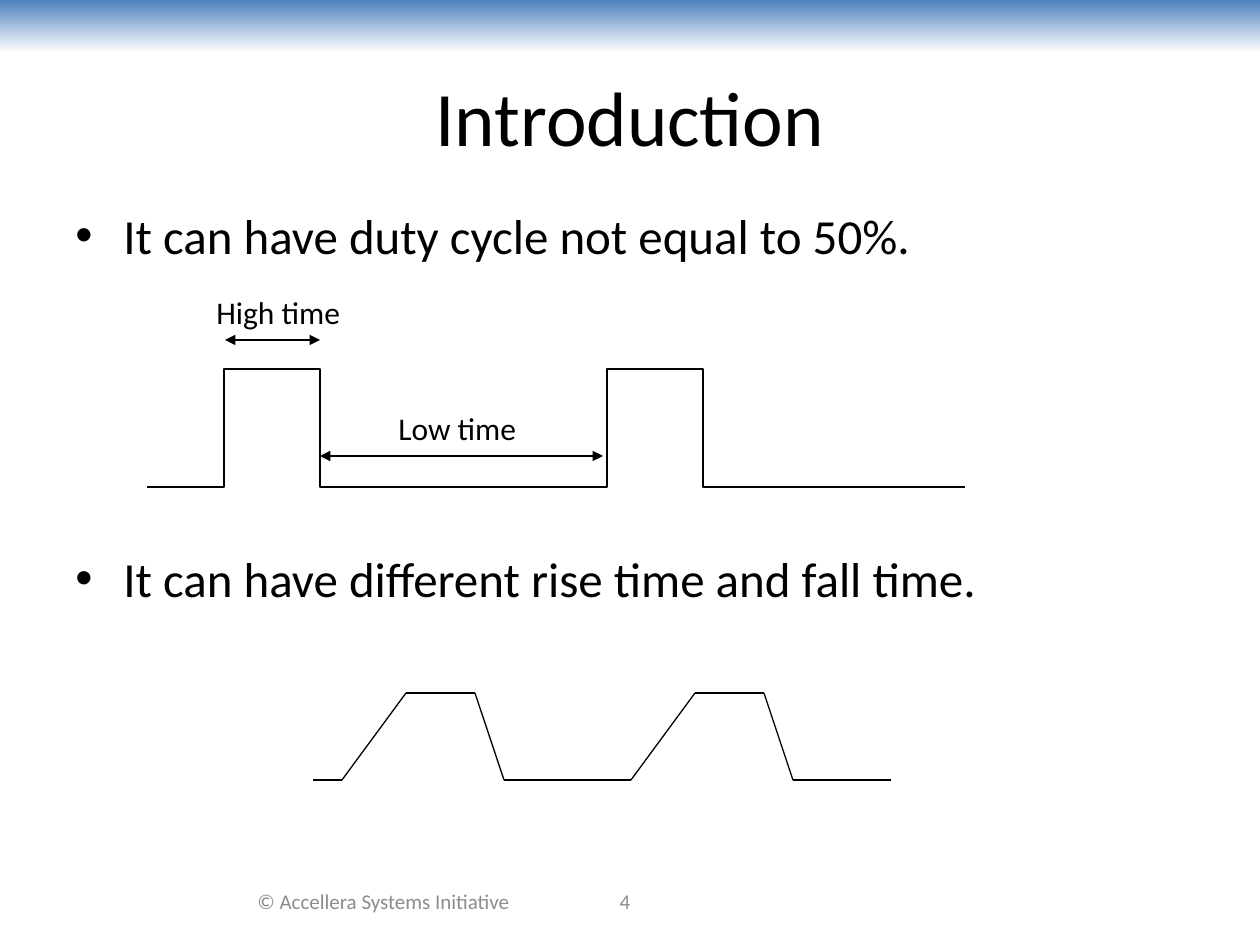
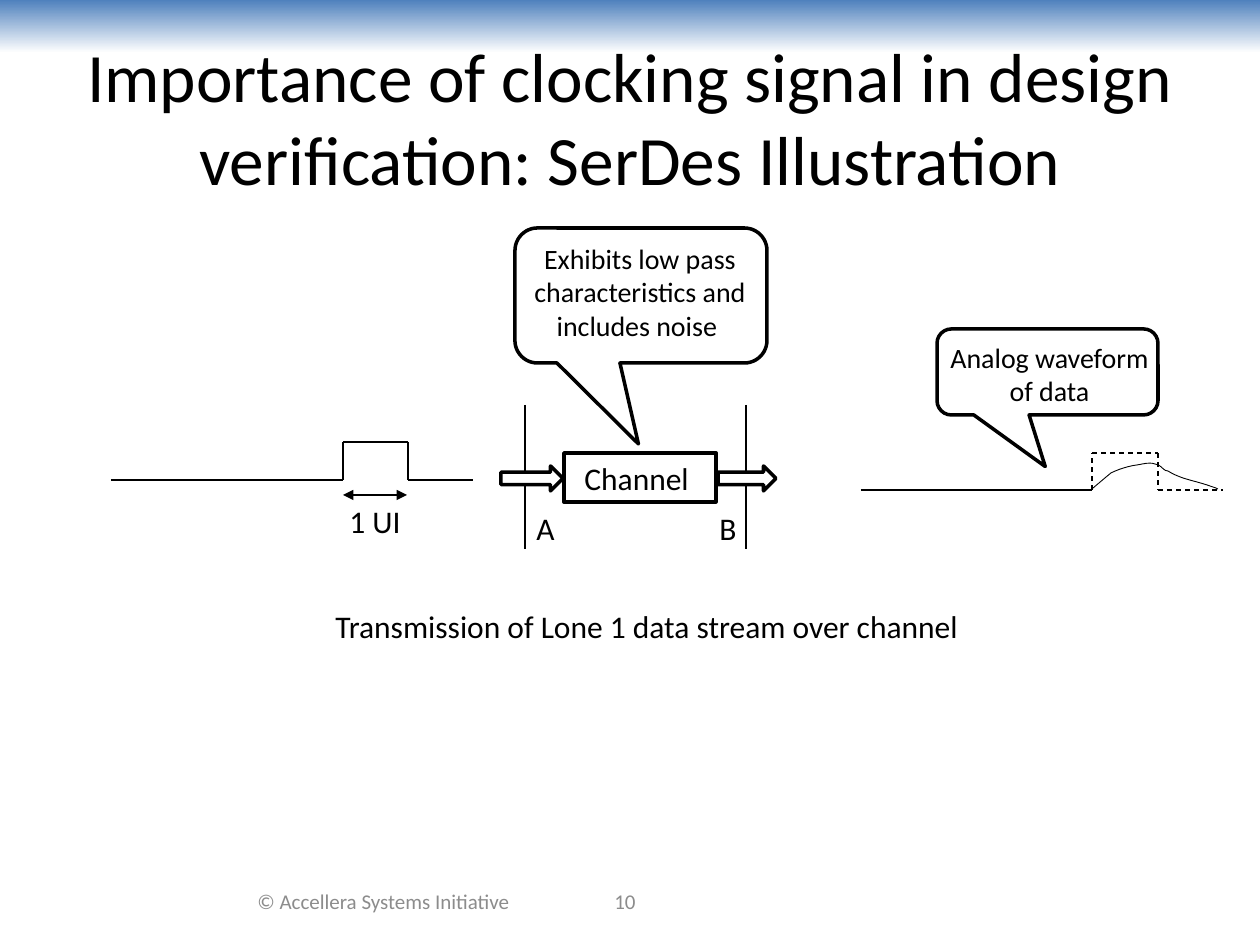
from dataclasses import dataclass
from itertools import pairwise

from lxml import etree
from pptx import Presentation
from pptx import util as u
from pptx.dml.color import RGBColor
from pptx.enum import dml, shapes, text
from pptx.oxml.ns import qn

SCALE = 914400 / 126  # EMU in one px


@dataclass(frozen=True)
class Theme:
    font: str = "Calibri"
    ink: str = "000000"
    paper: str = "FFFFFF"
    band: str = "4F81BD"
    muted: str = "8C8C8C"
    title: float = 44
    title_long: float = 39.6
    body: float = 28
    label: float = 18
    callout: float = 16
    footer: float = 12
    thin: float = 0.75
    curve: float = 0.5
    thick: float = 2


T = Theme()
ALIGN, ANCHOR, SHAPE = text.PP_ALIGN, text.MSO_ANCHOR, shapes.MSO_SHAPE
CENTRED = dict(align=ALIGN.CENTER, anchor=ANCHOR.MIDDLE)

# Shared content; every box is left, top, width, height
BAND_BOX = (0, 0, 1260, 53)
TITLE_BOX = (63, 37, 1134, 158)
FOOTER_TEXT = "© Accellera Systems Initiative"
FOOTER_BOX = (231, 876, 305, 50)
NUMBER_BOX = (504, 876, 242, 50)
BULLET_INDENT = 48

# Slide content; a wave has pulses that start at each x in "starts"
INTRO = {
    "title": "Introduction",
    "size": T.title,
    "number": "4",
    "bullets": [
        ("It can have duty cycle not equal to 50%.", (63, 199, 1134, 73)),
        ("It can have different rise time and fall time.", (63, 542, 1134, 142)),
    ],
    "square": dict(low=487, high=369, starts=(224, 607), top=96),
    "waves": [
        dict(lead=29, end=891, low=780, high=693, starts=(342, 631),
             top=69, rise=64, fall=29),
    ],
    "spans": [((225, 340), (320, 340)), ((320, 456), (603, 456))],
    "labels": [
        ("High time", (204, 287, 163, 50)),
        ("Low time", (386, 403, 163, 50)),
    ],
}
SERDES = {
    "title": "Importance of clocking signal in design "
             "verification: SerDes Illustration",
    "size": T.title_long,
    "number": "10",
    "waves": [
        dict(lead=232, end=473, low=480, high=442, starts=(343,), top=65),
        dict(lead=231, end=1223, low=490, high=453, starts=(1092,), top=66,
             dash=True),
    ],
    "lines": [
        ((525, 405), (525, 549)),
        ((746, 405), (746, 549)),
        ((861, 490), (1092, 490)),
    ],
    "spans": [((343, 495), (407, 495))],
    "labels": [
        ("A", (524, 503, 32, 50)),
        ("B", (707, 503, 32, 50)),
        ("1 UI", (337, 496, 84, 50)),
        ("Channel", (572, 453, 131, 50)),
        ("Transmission of Lone 1 data stream over channel", (323, 601, 651, 50)),
    ],
    "channel": (564, 453, 152, 49),
    "arrows": [(501, 466, 62, 25), (718, 466, 58, 25)],
    # Text, its box, the box of the balloon
    "callouts": [
        ("Exhibits low pass characteristics and includes noise ",
         (514, 235, 252, 115), (515, 228, 252, 135)),
        ("Analog waveform of data", (934, 334, 231, 81), (937, 329, 221, 86)),
    ],
    # First point, then two handles and an end point for each bend
    "curve": [
        (1092, 489),
        (1099, 483), (1105, 478), (1111, 473),
        (1119, 469), (1129, 466), (1137, 465),
        (1143, 464), (1150, 462), (1155, 464),
        (1162, 465), (1163, 471), (1168, 471),
        (1173, 474), (1175, 475), (1183, 478),
        (1189, 480), (1205, 484), (1210, 486),
        (1216, 488), (1216, 488), (1218, 489),
    ],
}


def px(*values):
    return [u.Emu(round(v * SCALE)) for v in values]


def rgb(value):
    return RGBColor.from_string(value)


def write(sp, content, size=T.label, color=T.ink, align=ALIGN.LEFT,
          anchor=ANCHOR.TOP, bullet=False):
    """Put one formatted paragraph into a shape."""
    tf = sp.text_frame
    tf.word_wrap = True
    tf.auto_size = text.MSO_AUTO_SIZE.NONE
    tf.vertical_anchor = anchor
    p = tf.paragraphs[0]
    p.alignment = align
    if bullet:
        pPr = p._p.get_or_add_pPr()
        indent = px(BULLET_INDENT)[0]
        pPr.set("marL", str(indent))
        pPr.set("indent", str(-indent))
        etree.SubElement(pPr, qn("a:buFont"), typeface="Arial")
        etree.SubElement(pPr, qn("a:buChar"), char="•")
    r = p.add_run()
    r.text = content
    r.font.name = T.font
    r.font.size = u.Pt(size)
    r.font.color.rgb = rgb(color)


def add_text(s, content, box, **style):
    write(s.shapes.add_textbox(*px(*box)), content, **style)


def outline(sp, width):
    sp.line.color.rgb = rgb(T.ink)
    sp.line.width = u.Pt(width)


def add_box(s, kind, box, fill=T.paper):
    sp = s.shapes.add_shape(kind, *px(*box))
    sp.shadow.inherit = False
    if fill:
        sp.fill.solid()
        sp.fill.fore_color.rgb = rgb(fill)
    else:
        sp.fill.background()
    outline(sp, T.thick)
    return sp


def add_line(s, start, end, dash=False, arrows=False, bend=None):
    """A straight line, or an elbow that turns at the fraction bend."""
    kinds = shapes.MSO_CONNECTOR
    kind = kinds.STRAIGHT if bend is None else kinds.ELBOW
    sp = s.shapes.add_connector(kind, *px(*start, *end))
    outline(sp, T.thin)
    if bend is not None:
        guides = sp._element.spPr.find(qn("a:prstGeom")).get_or_add_avLst()
        etree.SubElement(guides, qn("a:gd"), name="adj1",
                         fmla=f"val {round(bend * 100000)}")
    if dash:
        sp.line.dash_style = dml.MSO_LINE.DASH
    if arrows:
        ln = sp.line._get_or_add_ln()
        for tip in ("a:headEnd", "a:tailEnd"):
            etree.SubElement(ln, qn(tip), type="triangle")
    etree.SubElement(sp._element.spPr, qn("a:effectLst"))


def add_square(s, low, high, starts, top, before=77, after=60, tail=262):
    """Square pulses: an elbow up, an elbow down and a low line each."""
    bend = 0.55
    for x in starts:
        fall = x + top
        foot = fall + after
        crest = (fall - bend * foot) / (1 - bend)
        add_line(s, (crest, high), (foot, low), bend=bend)
        add_line(s, (fall, high), (x - before, low),
                 bend=top / (top + before))
        add_line(s, (foot - 7, low), (fall + tail, low))


def add_wave(s, lead, end, low, high, starts, top, rise=0, fall=0, dash=False):
    points = []
    for x in starts:
        points += [(x - lead, low), (x, low), (x + rise, high),
                   (x + rise + top, high), (x + rise + top + fall, low)]
    points.append((end, low))
    for a, b in pairwise(points):
        add_line(s, a, b, dash=dash)


def add_curve(s, points, steps=6):
    path = [points[0]]
    for i in range(0, len(points) - 1, 3):
        bend = points[i:i + 4]
        for n in range(1, steps + 1):
            t = n / steps
            weights = ((1 - t) ** 3, 3 * t * (1 - t) ** 2,
                       3 * t * t * (1 - t), t ** 3)
            path.append(tuple(sum(w * q[axis] for w, q in zip(weights, bend))
                              for axis in (0, 1)))
    path = [tuple(px(*q)) for q in path]
    fb = s.shapes.build_freeform(*path[0])
    fb.add_line_segments(path[1:], close=False)
    sp = fb.convert_to_shape()
    sp.shadow.inherit = False
    sp.fill.background()
    outline(sp, T.curve)


def add_slide(prs, content):
    """Title, band and footer, then the bullets, waves and labels."""
    s = prs.slides.add_slide(prs.slide_layouts[5])
    band = add_box(s, SHAPE.RECTANGLE, BAND_BOX)
    band.line.fill.background()
    band.fill.gradient()
    band.fill.gradient_angle = 270
    for stop, color in zip(band.fill.gradient_stops, (T.band, T.paper)):
        stop.color.rgb = rgb(color)
    s.shapes._spTree.insert(2, band._element)  # behind the title

    title = s.shapes.title
    title.left, title.top, title.width, title.height = px(*TITLE_BOX)
    write(title, content["title"], size=content["size"], **CENTRED)
    for note, box in ((FOOTER_TEXT, FOOTER_BOX),
                      (content["number"], NUMBER_BOX)):
        add_text(s, note, box, size=T.footer, color=T.muted, **CENTRED)

    for bullet, box in content.get("bullets", ()):
        add_text(s, bullet, box, size=T.body, bullet=True)
    if "square" in content:
        add_square(s, **content["square"])
    for wave in content["waves"]:
        add_wave(s, **wave)
    for start, end in content.get("lines", ()):
        add_line(s, start, end)
    for start, end in content["spans"]:
        add_line(s, start, end, arrows=True)
    for label, box in content["labels"]:
        add_text(s, label, box)
    return s


def add_channel(s, content):
    """The channel with its arrows, the received curve and the callouts."""
    add_box(s, SHAPE.RECTANGLE, content["channel"], fill=None)
    for box in content["arrows"]:
        add_box(s, SHAPE.RIGHT_ARROW, box)
    add_curve(s, content["curve"])
    for remark, box, balloon in content["callouts"]:
        sp = add_box(s, SHAPE.ROUNDED_RECTANGULAR_CALLOUT, balloon)
        sp.adjustments[0], sp.adjustments[1] = -0.01, 1.1
        add_text(s, remark, box, size=T.callout, align=ALIGN.CENTER)


def main():
    prs = Presentation()
    prs.slide_width, prs.slide_height = px(1260, 945)
    add_slide(prs, INTRO)
    add_channel(add_slide(prs, SERDES), SERDES)
    prs.save("out.pptx")


if __name__ == "__main__":
    main()
